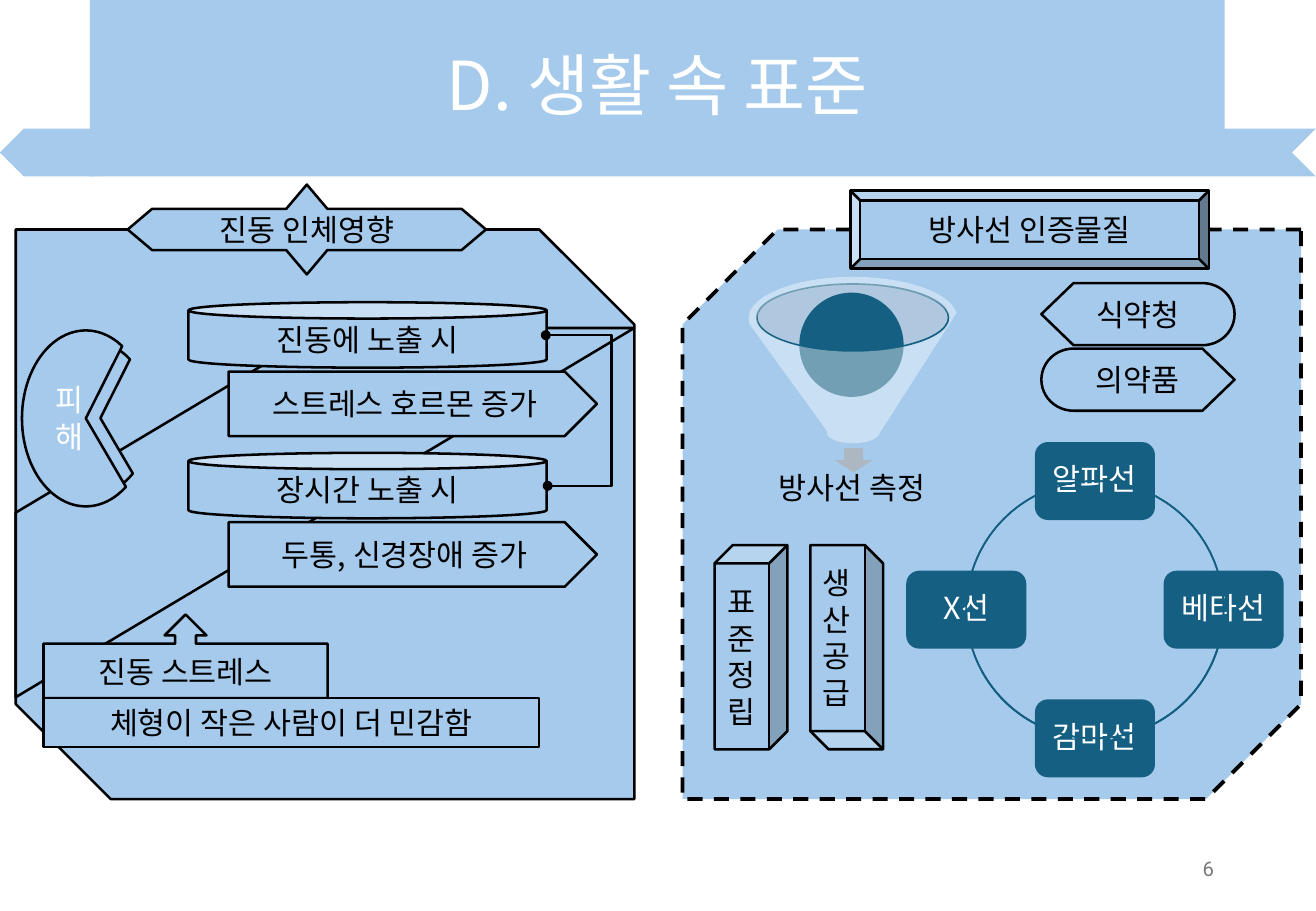
"""Build the slide on standards in daily life: vibration and radiation."""
import math
from lxml import etree
from pptx import Presentation
from pptx import util as u
from pptx.dml.color import RGBColor
from pptx.enum import dml, shapes, text
from pptx.oxml import ns

S = shapes.MSO_SHAPE
A = text.PP_ALIGN
SKY = RGBColor(0xA6, 0xCA, 0xEC)
TEAL = RGBColor(0x15, 0x60, 0x82)
MIST = RGBColor(0xBD, 0xC5, 0xCD)
STEEL = RGBColor(0xAC, 0xB7, 0xC1)
GREY = RGBColor(0x79, 0x79, 0x79)
BLACK = RGBColor(0, 0, 0)
WHITE = RGBColor(255, 255, 255)
KOREAN, LATIN = "Noto Sans CJK KR", "Roboto"
WIDE, HIGH = 27.51, 19.05

BITE = (35.794, 178.024)
TITLE = (1.88, 0, 23.72, 3.69)
HEAD = [
    (S.CHEVRON, "", (0, 2.69, WIDE, 1), dict(edge=None, flip="H")),
    (S.FLOWCHART_MANUAL_INPUT, "", TITLE, dict(edge=None, flip="HV")),
    (None, "D. 생활 속 표준", TITLE, dict(ink=WHITE, size=40, lead=0.9)),
]
HARM = [
    (S.SNIP_2_DIAG_RECTANGLE, "", (0.33, 4.8, 12.93, 11.91), {}),
    (S.QUAD_ARROW, "진동 인체영향", (2.67, 3.86, 7.49, 1.88),
     dict(adj=(0.458, 0.229, 0.271))),
    (S.DIAGONAL_STRIPE, "", (0.33, 6.86, 12.93, 7.72), {}),
    (S.PIE, "", (1.07, 7.21, 2.06, 3.07), dict(adj=BITE)),
    (S.PIE, "", (0.46, 6.91, 2.67, 3.68), dict(adj=BITE)),
    (None, "피해", (0.91, 7.85, 0.99, 1.8),
     dict(ink=WHITE, side=A.LEFT, top=True)),
]
CAUSES = [("진동에 노출 시", "스트레스 호르몬 증가"),
          ("장시간 노출 시", "두통, 신경장애 증가")]
CAN, PLATE, DROP = (3.94, 6.32, 7.49, 1.37), (4.78, 7.77, 7.7, 1.35), 3.15
STRESS = [
    (S.UP_ARROW_CALLOUT, "진동 스트레스", (0.91, 12.85, 5.94, 1.75), {}),
    (S.RECTANGLE, "체형이 작은 사람이 더 민감함", (0.91, 14.6, 10.36, 1.02), {}),
]
LINK = (11.41, 7.01, 11.45, 10.16)
BEND = 12.78
RAYS = [
    (S.SNIP_2_DIAG_RECTANGLE, "", (14.27, 4.8, 12.93, 11.91),
     dict(flip="H", thick=2.25, dash=True)),
    (S.BEVEL, "방사선 인증물질", (17.78, 3.99, 7.49, 1.63), {}),
    (S.OVAL, "", (15.82, 5.94, 4.01, 1.4),
     dict(fill=MIST, alpha=40, edge=TEAL, thick=1)),
    (S.DOWN_ARROW, "", (17.45, 9.37, 0.79, 0.51), dict(fill=STEEL, edge=None)),
    (None, "방사선 측정", (15.29, 9.78, 5.05, 0.94), dict(pad=0.36, lead=0.9)),
    (S.OVAL, "", (16.71, 6.12, 2.18, 2.18), dict(fill=TEAL, edge=None)),
    (S.FUNNEL, "", (15.65, 5.79, 4.37, 3.48),
     dict(fill=WHITE, alpha=40, edge=None)),
    (S.FLOWCHART_DISPLAY, "식약청", (21.77, 5.92, 4.04, 1.3), {}),
    (S.FLOWCHART_DISPLAY, "의약품", (21.77, 7.29, 4.04, 1.3), dict(flip="H")),
    (S.CUBE, "표준정립", (14.94, 11.4, 1.52, 4.27), {}),
    (S.CUBE, "", (16.94, 11.4, 1.52, 4.27), dict(flip="V")),
    (None, "생산공급", (16.94, 11.68, 0.84, 3.33), dict(side=A.LEFT, top=True)),
]
NODES = ["알파선", "베타선", "감마선", "X선"]
MID_X, MID_Y, REACH = 22.89, 12.75, 2.69
NODE_W, NODE_H = 2.51, 1.63
ARC_FROM, ARC_TO = 18.1, 61.7
PAGE = (None, "6", (19.43, 17.65, 6.2, 1.02),
        dict(ink=GREY, size=12, font=LATIN, side=A.RIGHT))


def child(base, tag, **attrs):
    """Add a drawing element under base."""
    return etree.SubElement(base, ns.qn("a:" + tag), attrs)


def write(shape, label, ink=BLACK, size=18, font=KOREAN, side=A.CENTER,
          top=False, pad=0.25, lead=None):
    """Put a styled label in a shape."""
    frame = shape.text_frame
    frame.text = label
    frame.word_wrap = True
    frame.vertical_anchor = text.MSO_ANCHOR.TOP if top else text.MSO_ANCHOR.MIDDLE
    frame.margin_left = frame.margin_right = u.Cm(pad)
    para = frame.paragraphs[0]
    para.alignment = side
    if lead:
        para.line_spacing = lead
    for run in para.runs:
        run.font.size = u.Pt(size)
        run.font.name = font
        run.font.color.rgb = ink
        child(run.font._element, "ea", typeface=font)


def draw(slide, kind, label, box, fill=SKY, edge=BLACK, thick=1.5, dash=False,
         flip="", adj=(), alpha=None, **style):
    """Draw one shape, or a text box when kind is None."""
    spot = [u.Cm(v) for v in box]
    if kind is None:
        write(slide.shapes.add_textbox(*spot), label, **style)
        return
    shape = slide.shapes.add_shape(kind, *spot)
    shape.shadow.inherit = False
    for i, value in enumerate(adj):
        shape.adjustments[i] = value
    for axis in flip:
        shape.element.spPr.get_or_add_xfrm().set("flip" + axis, "1")
    if fill is None:
        shape.fill.background()
    else:
        shape.fill.solid()
        shape.fill.fore_color.rgb = fill
    if alpha:
        tone = shape.element.spPr.find(".//" + ns.qn("a:srgbClr"))
        child(tone, "alpha", val=str(alpha * 1000))
    if edge is None:
        shape.line.fill.background()
    else:
        shape.line.color.rgb = edge
        shape.line.width = u.Pt(thick)
    if dash:
        shape.line.dash_style = dml.MSO_LINE.DASH
    if label:
        write(shape, label, **style)


def join(slide):
    """Link the two causes with a bent line ending in dots."""
    line = slide.shapes.add_connector(
        shapes.MSO_CONNECTOR.ELBOW, *[u.Cm(v) for v in LINK])
    line.line.color.rgb = BLACK
    line.line.width = u.Pt(1.5)
    props = line._element.spPr
    bend = round((BEND - LINK[0]) / (LINK[2] - LINK[0]) * 100000)
    child(props.find(".//" + ns.qn("a:avLst")), "gd", name="adj1", fmla=f"val {bend}")
    for end in ("headEnd", "tailEnd"):
        child(props.find(ns.qn("a:ln")), end, type="oval")
    child(props, "effectLst")


def ring(slide):
    """Draw the four rays around a circle with arcs between them."""
    arc_box = (MID_X - REACH, MID_Y - REACH, 2 * REACH, 2 * REACH)
    for i, label in enumerate(NODES):
        turn = math.radians(90 * i - 90)
        x = MID_X + REACH * math.cos(turn) - NODE_W / 2
        y = MID_Y + REACH * math.sin(turn) - NODE_H / 2
        draw(slide, S.ROUNDED_RECTANGLE, label, (x, y, NODE_W, NODE_H),
             fill=TEAL, edge=None, ink=WHITE, lead=0.9, pad=0.18)
        span = [(a + 90 * i) % 360 for a in (ARC_FROM, ARC_TO)]
        span = [(a - 360 if a > 180 else a) * 0.6 for a in span]
        draw(slide, S.ARC, "", arc_box, fill=None, edge=TEAL, thick=1, adj=span)


def main():
    """Assemble and save the slide."""
    deck = Presentation()
    deck.slide_width, deck.slide_height = u.Cm(WIDE), u.Cm(HIGH)
    slide = deck.slides.add_slide(deck.slide_layouts[6])
    pairs = []
    for i, labels in enumerate(CAUSES):
        for kind, label, (x, y, w, h) in zip((S.CAN, S.PENTAGON), labels, (CAN, PLATE)):
            pairs.append((kind, label, (x, y + i * DROP, w, h), {}))
    for kind, label, box, style in HEAD + HARM + pairs + STRESS:
        draw(slide, kind, label, box, **style)
    join(slide)
    for kind, label, box, style in RAYS + [PAGE]:
        draw(slide, kind, label, box, **style)
    ring(slide)
    deck.save("out.pptx")


if __name__ == "__main__":
    main()
